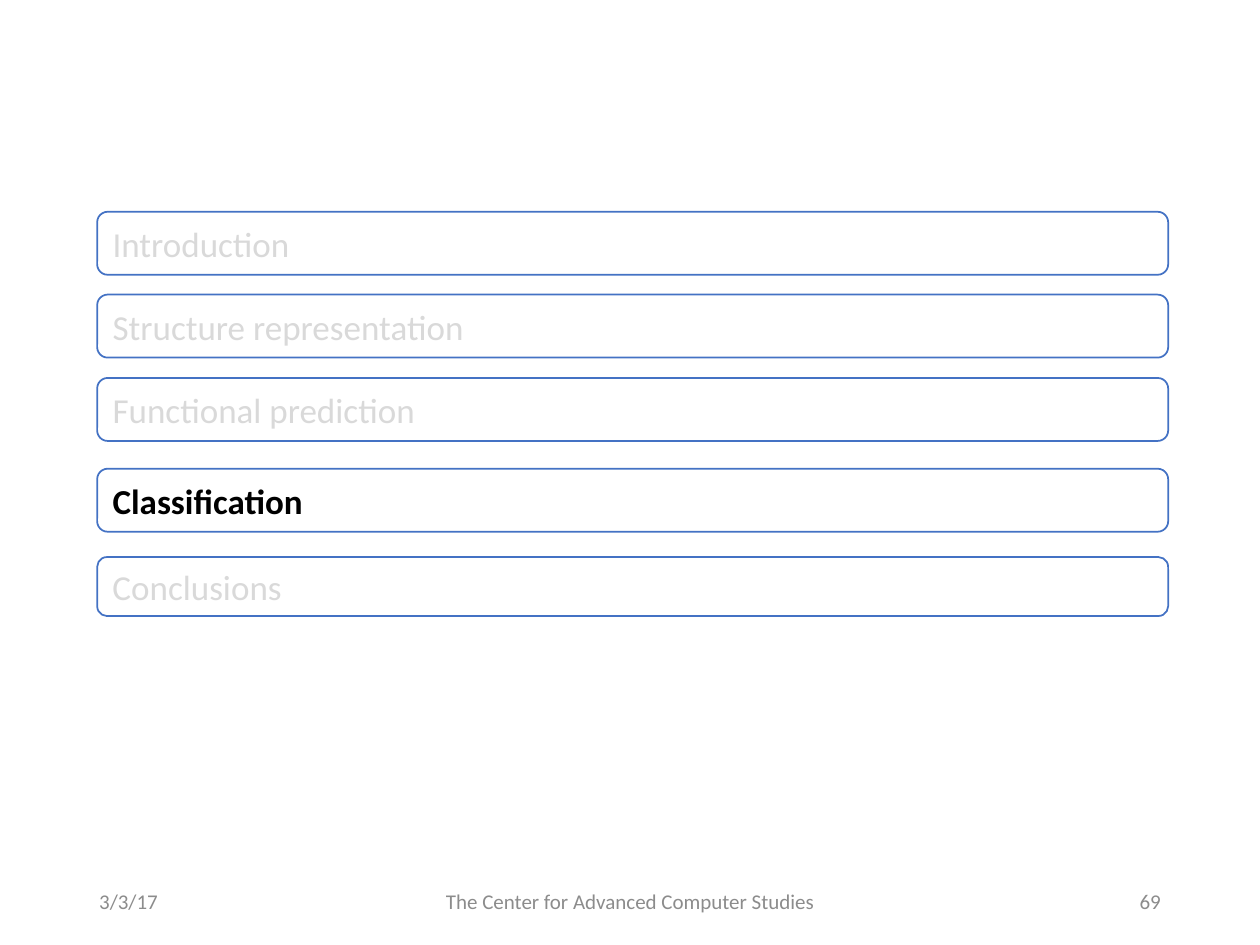
from dataclasses import dataclass

from pptx import Presentation
from pptx import util as u
from pptx.dml.color import RGBColor
from pptx.enum import shapes, text

HUES = {"line": "4472C4", "fill": "FFFFFF", "dim": "D9D9D9",
        "live": "000000", "foot": "8C8C8C"}
FONT = "Calibri"
ALIGN = text.PP_ALIGN


@dataclass
class Topic:
    label: str
    top: float
    high: float = 1.27
    live: bool = False


@dataclass
class Note:
    label: str
    left: float
    width: float
    align: ALIGN


TOPICS = [
    Topic("Introduction", 4.27),
    Topic("Structure representation", 5.94),
    Topic("Functional prediction", 7.62),
    Topic("Classification", 9.45, live=True),
    Topic("Conclusions", 11.23, high=1.19),
]
NOTES = [
    Note("The Center for Advanced Computer Studies", 8.41, 8.59, ALIGN.CENTER),
    Note("3/3/17", 1.75, 5.72, ALIGN.LEFT),
    Note("69", 17.93, 5.72, ALIGN.RIGHT),
]


def hue(name: str) -> RGBColor:
    return RGBColor.from_string(HUES[name])


def write(shape, label: str, size: int, tone: str, align: ALIGN,
          bold: bool = False) -> None:
    frame = shape.text_frame
    frame.word_wrap = True
    frame.vertical_anchor = text.MSO_ANCHOR.MIDDLE
    para = frame.paragraphs[0]
    para.alignment = align
    run = para.add_run()
    run.text = label
    run.font.name = FONT
    run.font.size = u.Pt(size)
    run.font.bold = bold
    run.font.color.rgb = hue(tone)


def draw_topic(slide, topic: Topic) -> None:
    bar = slide.shapes.add_shape(
        shapes.MSO_SHAPE.ROUNDED_RECTANGLE,
        u.Cm(1.96), u.Cm(topic.top), u.Cm(21.59), u.Cm(topic.high))
    bar.shadow.inherit = False
    bar.fill.solid()
    bar.fill.fore_color.rgb = hue("fill")
    bar.line.color.rgb = hue("line")
    bar.line.width = u.Pt(1)
    tone = "live" if topic.live else "dim"
    write(bar, topic.label, 20, tone, ALIGN.LEFT, topic.live)


def draw_note(slide, note: Note) -> None:
    box = slide.shapes.add_textbox(
        u.Cm(note.left), u.Cm(17.65), u.Cm(note.width), u.Cm(1.02))
    write(box, note.label, 12, "foot", note.align)


def main() -> None:
    deck = Presentation()
    deck.slide_width, deck.slide_height = u.Cm(25.4), u.Cm(19.05)
    slide = deck.slides.add_slide(deck.slide_layouts[6])
    for topic in TOPICS:
        draw_topic(slide, topic)
    for note in NOTES:
        draw_note(slide, note)
    deck.save("out.pptx")


if __name__ == "__main__":
    main()
